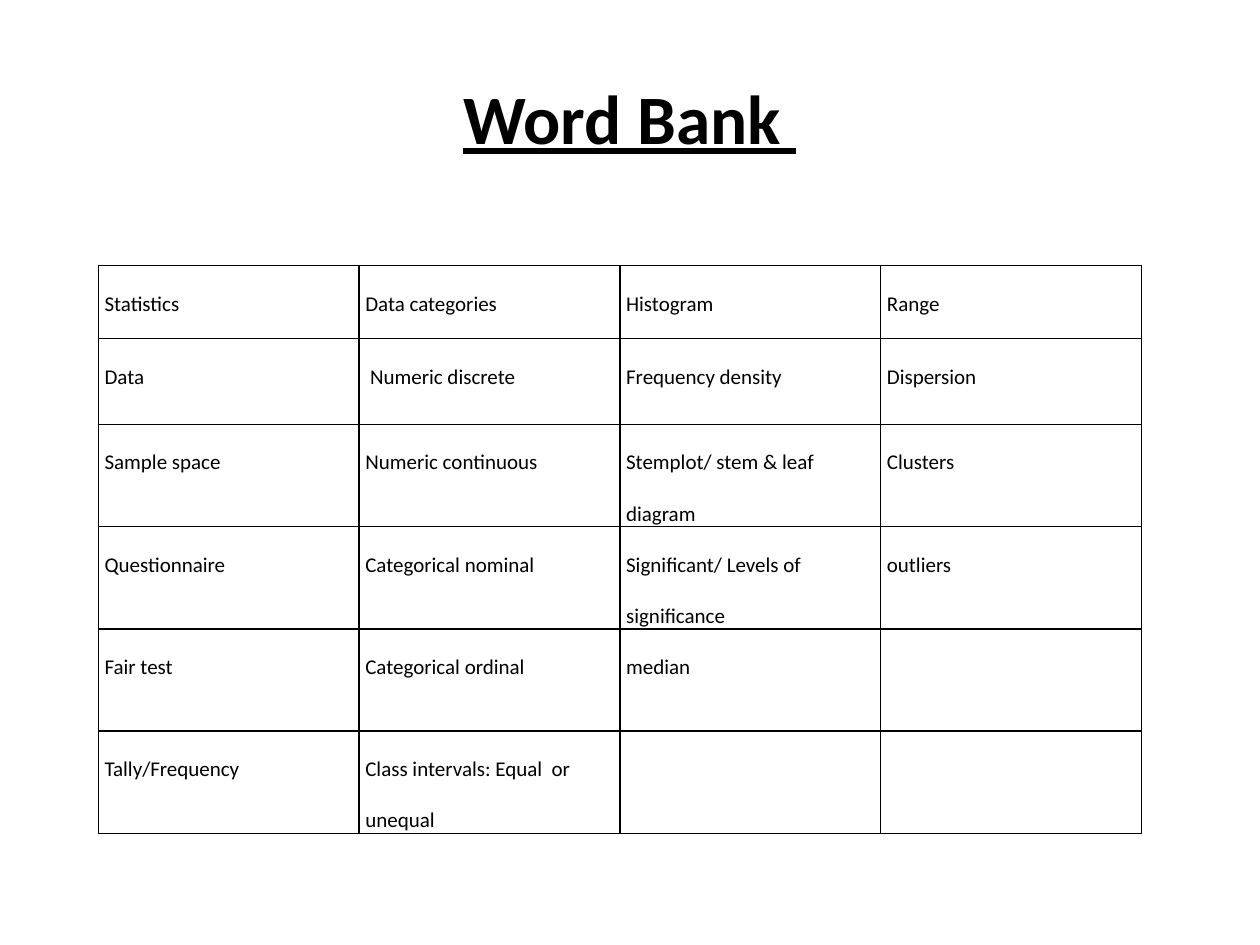
from dataclasses import dataclass

from lxml.etree import SubElement
from pptx import Presentation
from pptx.dml.color import RGBColor
from pptx.enum.text import MSO_ANCHOR, PP_ALIGN
from pptx.oxml.ns import qn
from pptx.slide import Slide
from pptx.util import Inches, Pt

BLACK = RGBColor(0, 0, 0)
WHITE = RGBColor(255, 255, 255)

WIDTH, HEIGHT = Inches(10), Inches(7.5)
ROW_HEIGHTS = [0.58, 0.68] + [0.81] * 4
WORDS = [
    ["Statistics", "Data categories", "Histogram", "Range"],
    ["Data", " Numeric discrete", "Frequency density", "Dispersion"],
    ["Sample space", "Numeric continuous", "Stemplot/ stem & leaf diagram", "Clusters"],
    ["Questionnaire", "Categorical nominal", "Significant/ Levels of significance", "outliers"],
    ["Fair test", "Categorical ordinal", "median", ""],
    ["Tally/Frequency", "Class intervals: Equal  or unequal", "", ""],
]


def write(frame, text, size, font="Calibri", color=BLACK, bold=False,
          underline=False, align=PP_ALIGN.LEFT, spacing=1.0):
    paragraph = frame.paragraphs[0]
    paragraph.alignment = align
    paragraph.line_spacing = spacing
    run = paragraph.add_run()
    run.text = text
    run.font.name = font
    run.font.size = Pt(size)
    run.font.bold = bold
    run.font.underline = underline
    run.font.color.rgb = color


@dataclass
class Page:
    slide: Slide
    font: str = "Calibri"
    ink: RGBColor = BLACK
    border: float = 1

    def background(self, color):
        fill = self.slide.background.fill
        fill.solid()
        fill.fore_color.rgb = color

    def title(self, text, left, top, width, height, size):
        heading = self.slide.shapes.title
        heading.left, heading.width = int(WIDTH * left), int(WIDTH * width)
        heading.top, heading.height = int(HEIGHT * top), int(HEIGHT * height)
        heading.text_frame.vertical_anchor = MSO_ANCHOR.MIDDLE
        write(heading.text_frame, text, size, font=self.font, color=self.ink,
              bold=True, underline=True, align=PP_ALIGN.CENTER)

    def outline(self, cell):
        properties = cell._tc.get_or_add_tcPr()
        for side in ("a:lnL", "a:lnR", "a:lnT", "a:lnB"):
            line = SubElement(properties, qn(side), w=str(Pt(self.border)))
            fill = SubElement(line, qn("a:solidFill"))
            SubElement(fill, qn("a:srgbClr"), val=str(self.ink))

    def table(self, rows, heights, left, top, width, size):
        grid = self.slide.shapes.add_table(
            len(rows), len(rows[0]), int(WIDTH * left), int(HEIGHT * top),
            int(WIDTH * width), Inches(sum(heights))).table
        grid.first_row = grid.horz_banding = False
        for row, height, words in zip(grid.rows, heights, rows):
            row.height = Inches(height)
            for cell, word in zip(row.cells, words):
                self.outline(cell)
                cell.fill.background()
                cell.margin_left = cell.margin_right = Inches(0.05)
                cell.margin_top = cell.margin_bottom = 0
                if word:
                    write(cell.text_frame, word, size, font=self.font,
                          color=self.ink, spacing=2.0)


def main():
    deck = Presentation()
    deck.slide_width, deck.slide_height = WIDTH, HEIGHT
    page = Page(deck.slides.add_slide(deck.slide_layouts.get_by_name("Title Only")))
    page.background(WHITE)
    page.title("Word Bank ", left=0.05, top=0.04, width=0.9, height=1 / 6, size=39.6)
    page.table(WORDS, ROW_HEIGHTS, left=0.078, top=0.281, width=0.828, size=12)
    deck.save("out.pptx")


if __name__ == "__main__":
    main()
